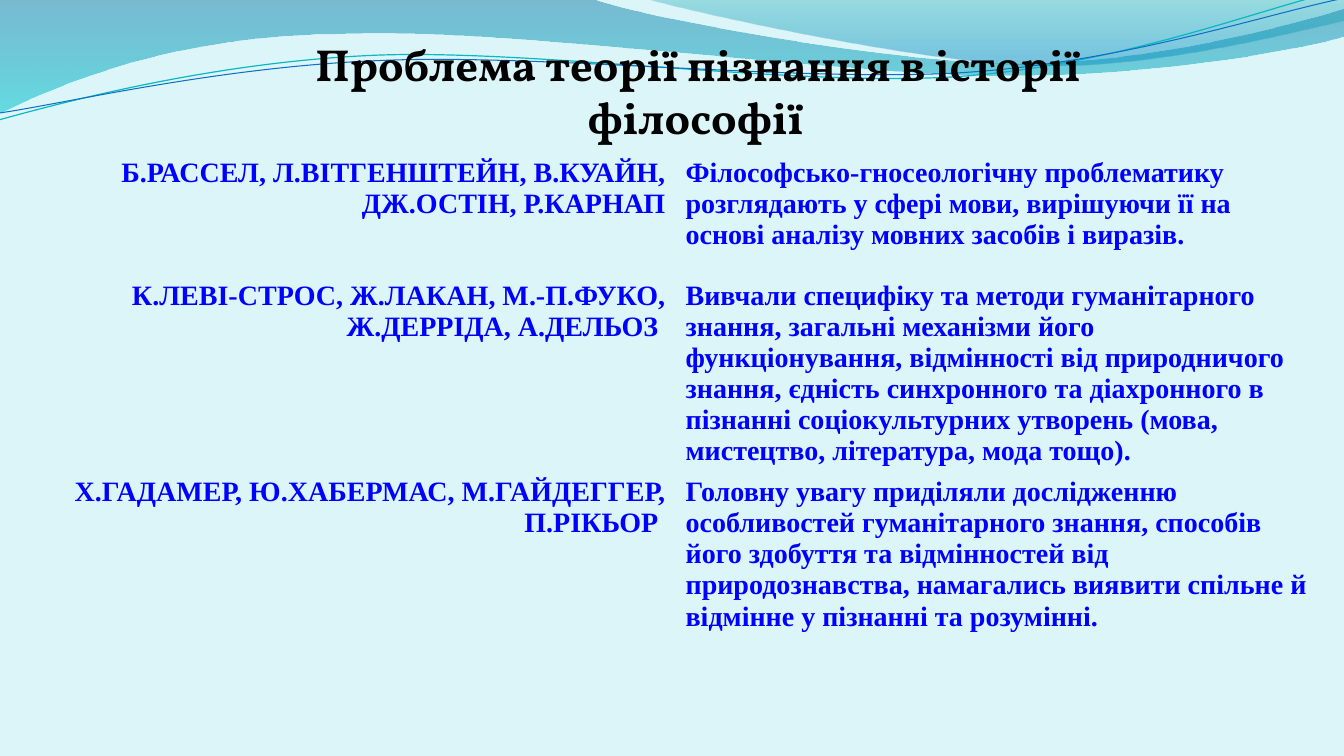
"""Build a slide on the theory of knowledge in the history of philosophy."""
from math import cos, radians, sin

from lxml import etree
from pptx import Presentation
from pptx.dml.color import RGBColor
from pptx.enum.text import MSO_ANCHOR, MSO_AUTO_SIZE, PP_ALIGN
from pptx.oxml.ns import qn
from pptx.util import Inches, Pt

LEFT, RIGHT, CENTER = PP_ALIGN.LEFT, PP_ALIGN.RIGHT, PP_ALIGN.CENTER
TOP = MSO_ANCHOR.TOP
NO_AUTOFIT = MSO_AUTO_SIZE.NONE
TITLE_ONLY = 5
STROKE_TILT = 2.7
STROKE_CENTER = (6.66, 0.58)
PLAIN_TABLE_STYLE = "{2D5ABB26-0587-4C30-8999-92F81FD0307C}"

COLORS = {
    "background": "DBF5F9",
    "title": "000000",
    "text": "0000FF",
    "deep": "0074A1",
    "cyan": "00C6CF",
    "teal": "00A1A9",
    "sky": "008BBF",
    "teal_line": "0AB8BF",
    "blue_line": "0F6FC6",
}

# Each wave is a start and segments: one point a line, three a curve.
LEFT_WAVE = [
    [(0, -0.01)],
    [(5.87, -0.01)],
    [(6.34, 0.17), (8.85, 0.63), (10.11, 0.63)],
    [(11.38, 0.63), (12.78, 0.26), (13.33, 0.09)],
    [(13.35, 0.36)],
    [(13.11, 0.44), (11.6, 0.76), (9.94, 0.75)],
    [(8.29, 0.75), (5.09, 0.28), (3.43, 0.34)],
    [(1.72, 0.35), (0.61, 0.83), (-0.01, 1.13)],
    [(0, -0.01)],
]
RIGHT_WAVE = [
    [(6.39, -0.01)],
    [(6.79, 0.11), (9.09, 0.62), (10.25, 0.65)],
    [(11.41, 0.69), (12.82, 0.32), (13.33, 0.21)],
    [(13.33, 0)],
    [(6.39, -0.01)],
]
TEAL_STROKE = [
    [(-0.01, 1.19)],
    [(0.64, 1.01), (2.11, 0.62), (3.69, 0.55)],
    [(5.27, 0.48), (7.9, 0.87), (9.5, 0.76)],
    [(11.1, 0.65), (12.52, 0.08), (13.31, -0.1)],
]
BLUE_STROKE = [
    [(0, 1.12)],
    [(0.63, 1.03), (2.18, 0.66), (3.78, 0.6)],
    [(5.37, 0.53), (7.96, 0.82), (9.55, 0.72)],
    [(11.15, 0.62), (12.55, 0.14), (13.34, -0.02)],
]

COLUMN_WIDTHS = (6.36, 6.41)
ROW_HEIGHTS = (1.22, 1.06, 1.77)
SCHOOLS = [
    ("Б.РАССЕЛ, Л.ВІТГЕНШТЕЙН, В.КУАЙН, ДЖ.ОСТІН, Р.КАРНАП",
     "Філософсько-гносеологічну проблематику розглядають у сфері мови, "
     "вирішуючи її на основі аналізу мовних засобів і виразів."),
    ("К.ЛЕВІ-СТРОС, Ж.ЛАКАН, М.-П.ФУКО, Ж.ДЕРРІДА, А.ДЕЛЬОЗ ",
     "Вивчали специфіку та методи гуманітарного знання, загальні механізми "
     "його функціонування, відмінності від природничого знання, єдність "
     "синхронного та діахронного в пізнанні соціокультурних утворень "
     "(мова, мистецтво, література, мода тощо)."),
    ("X.ГАДАМЕР, Ю.ХАБЕРМАС, М.ГАЙДЕГГЕР, П.РІКЬОР ",
     "Головну увагу приділяли дослідженню особливостей гуманітарного "
     "знання, способів його здобуття та відмінностей від природознавства, "
     "намагались виявити спільне й відмінне у пізнанні та розумінні."),
]


def color(name):
    """Return a named colour."""
    return RGBColor.from_string(COLORS[name])


def level(point):
    """Turn a point of a tilted stroke back to its untilted place."""
    angle = radians(STROKE_TILT)
    dx, dy = (value - mid for value, mid in zip(point, STROKE_CENTER))
    return (STROKE_CENTER[0] + dx * cos(angle) - dy * sin(angle),
            STROKE_CENTER[1] + dx * sin(angle) + dy * cos(angle))


def add_outline(slide, wave, close):
    """Add a freeform without shadow, with true Bézier curves."""
    points = [(Inches(x), Inches(y)) for segment in wave for x, y in segment]
    builder = slide.shapes.build_freeform(*points[0])
    builder.add_line_segments(points[1:], close=close)
    shape = builder.convert_to_shape()
    shape.shadow.inherit = False
    lines = iter(list(shape._element.spPr.iter(qn("a:lnTo"))))
    for segment in wave[1:]:
        parts = [next(lines) for _ in segment]
        if len(parts) == 3:
            curve = etree.Element(qn("a:cubicBezTo"))
            parts[0].addprevious(curve)
            for part in parts:
                curve.append(part[0])
                part.getparent().remove(part)
    return shape


def add_band(slide, wave, stops):
    """Add a wave with a downward gradient of (colour, position, opacity)."""
    shape = add_outline(slide, wave, True)
    shape.line.fill.background()
    shape.fill.gradient()
    shape.fill.gradient_angle = 270
    for stop, (name, position, _) in zip(shape.fill.gradient_stops, stops):
        stop.color.rgb = color(name)
        stop.position = position
    tints = shape._element.spPr.iter(qn("a:srgbClr"))
    for tint, (_, _, opacity) in zip(list(tints), stops):
        alpha = etree.SubElement(tint, qn("a:alpha"))
        alpha.set("val", str(opacity * 1000))


def add_stroke(slide, wave, name, width):
    """Add an open, tilted curved line."""
    untilted = [[level(point) for point in segment] for segment in wave]
    shape = add_outline(slide, untilted, False)
    shape.rotation = 360 - STROKE_TILT
    shape.fill.background()
    shape.line.color.rgb = color(name)
    shape.line.width = Pt(width)


def add_span(para, text, font, size, name):
    """Add a bold formatted run."""
    span = para.add_run()
    span.text = text
    span.font.name = font
    span.font.size = Pt(size)
    span.font.bold = True
    span.font.color.rgb = color(name)


def add_title(slide):
    """Place the title in front of the waves."""
    box = slide.shapes.title
    slide.shapes._spTree.append(box._element)
    box.left, box.top = Inches(2.2), Inches(0.31)
    box.width, box.height = Inches(9.45), Inches(1.18)
    frame = box.text_frame
    frame.word_wrap = True
    frame.auto_size = NO_AUTOFIT
    frame.vertical_anchor = TOP
    para = frame.paragraphs[0]
    para.alignment = CENTER
    add_span(para, "Проблема теорії пізнання в історії філософії",
             "Vollkorn", 32, "title")
    add_span(para, " ", "Vollkorn", 18, "title")


def add_schools(slide):
    """Add the table of philosophers and their views."""
    frame = slide.shapes.add_table(
        len(SCHOOLS), len(COLUMN_WIDTHS), Inches(0.34), Inches(1.51),
        Inches(sum(COLUMN_WIDTHS)), Inches(5.08))
    table = frame.table
    table.first_row = table.horz_banding = False
    table._tbl.tblPr.find(qn("a:tableStyleId")).text = PLAIN_TABLE_STYLE
    for column, width in zip(table.columns, COLUMN_WIDTHS):
        column.width = Inches(width)
    for row, height, texts in zip(table.rows, ROW_HEIGHTS, SCHOOLS):
        row.height = Inches(height)
        for cell, text, alignment in zip(row.cells, texts, (RIGHT, LEFT)):
            cell.fill.background()
            para = cell.text_frame.paragraphs[0]
            para.alignment = alignment
            para.space_before = Pt(10)
            add_span(para, text, "Times New Roman", 20, "text")


def main():
    """Build and save the deck."""
    deck = Presentation()
    deck.slide_width, deck.slide_height = Inches(13.33), Inches(7.5)
    page = deck.slides.add_slide(deck.slide_layouts[TITLE_ONLY])
    page.background.fill.solid()
    page.background.fill.fore_color.rgb = color("background")
    add_band(page, LEFT_WAVE, [("deep", 0, 45), ("cyan", 1, 55)])
    add_band(page, RIGHT_WAVE, [("teal", 0, 30), ("sky", 0.8, 45)])
    add_stroke(page, TEAL_STROKE, "teal_line", 0.85)
    add_stroke(page, BLUE_STROKE, "blue_line", 0.75)
    add_title(page)
    add_schools(page)
    deck.save("out.pptx")


if __name__ == "__main__":
    main()
